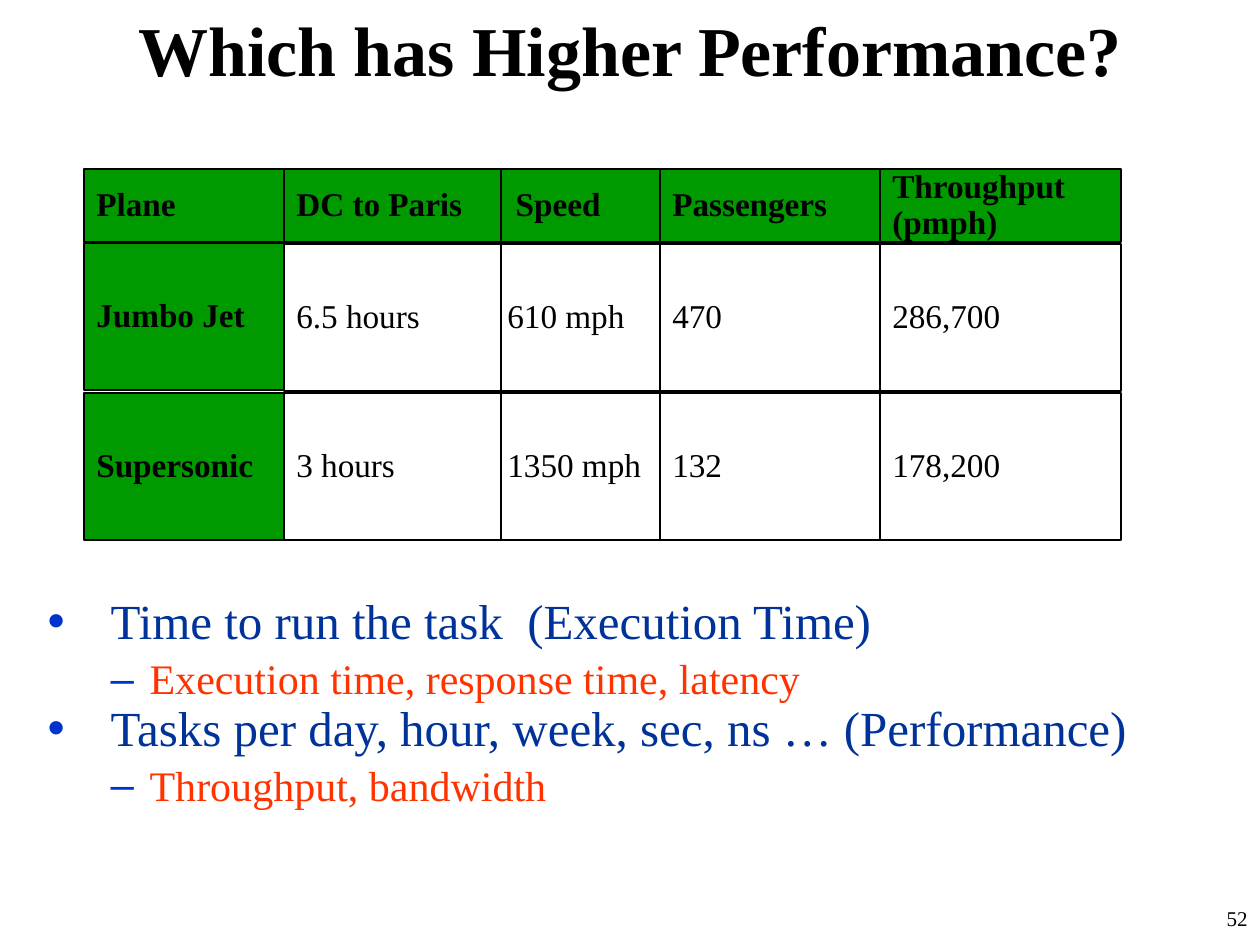
"""Build a slide that compares the performance of two planes."""
from lxml import etree
from pptx import Presentation
from pptx.dml.color import RGBColor
from pptx.enum import shapes
from pptx.enum import text as enums
from pptx.oxml import ns
from pptx.util import Emu, Pt

FONT = "Times New Roman"
BLACK, WHITE, GREEN = "000000", "FFFFFF", "009900"
BLUE, BULLET_BLUE, ORANGE = "003399", "0033CC", "FF3300"


def px(length):
    """Turn px into EMU."""
    return Emu(round(length * 914400 / 126))


def color(value):
    """Turn a hex string into a colour."""
    return RGBColor.from_string(value)


def write(paragraph, content, size=19, fill=BLACK, bold=False, align=None, spacing=None, before=0):
    """Write formatted text into a paragraph."""
    paragraph.alignment = align
    paragraph.line_spacing = spacing
    paragraph.space_before = Pt(before)
    run = paragraph.add_run()
    run.text = content
    run.font.name = FONT
    run.font.size = Pt(size)
    run.font.bold = bold
    run.font.color.rgb = color(fill)


def add_bullet(paragraph, character, margin, indent):
    """Give a paragraph a hanging bullet."""
    properties = paragraph._p.get_or_add_pPr()
    properties.set("marL", str(px(margin)))
    properties.set("indent", str(-px(indent)))
    bullet_color = etree.SubElement(properties, ns.qn("a:buClr"))
    etree.SubElement(bullet_color, ns.qn("a:srgbClr"), val=BULLET_BLUE)
    etree.SubElement(properties, ns.qn("a:buChar"), char=character)


class SlideBuilder:
    """Hold the style and the current slide."""

    def __init__(self, presentation):
        """Start a slide with a title and a body."""
        self.slide = presentation.slides.add_slide(presentation.slide_layouts[1])

    def place(self, shape, left, top, width, height):
        """Move a text shape and return its frame."""
        shape.left, shape.top, shape.width, shape.height = map(px, (left, top, width, height))
        frame = shape.text_frame
        frame.word_wrap = True
        frame.auto_size = enums.MSO_AUTO_SIZE.NONE
        return frame

    def title(self, content, *box):
        """Fill the title."""
        frame = self.place(self.slide.shapes.title, *box)
        frame.vertical_anchor = enums.MSO_ANCHOR.MIDDLE
        write(frame.paragraphs[0], content, size=40, bold=True, align=enums.PP_ALIGN.CENTER)

    def bullets(self, items, *box):
        """Fill the body with bullets on two levels."""
        frame = self.place(self.slide.placeholders[1], *box)
        for index, (level, content) in enumerate(items):
            paragraph = frame.add_paragraph() if index else frame.paragraphs[0]
            paragraph.level = level
            if level:
                write(paragraph, content, size=24, fill=ORANGE, spacing=0.9, before=4.8)
                add_bullet(paragraph, "–", 102, 39)
            else:
                write(paragraph, content, size=28, fill=BLUE, spacing=0.9)
                add_bullet(paragraph, "•", 63, 63)

    def cell(self, content, heading, *box):
        """Add one outlined box of the comparison."""
        shape = self.slide.shapes.add_shape(shapes.MSO_SHAPE.RECTANGLE, 0, 0, 0, 0)
        shape.shadow.inherit = False
        shape.fill.solid()
        shape.fill.fore_color.rgb = color(GREEN if heading else WHITE)
        shape.line.color.rgb = color(BLACK)
        shape.line.width = Pt(1)
        frame = self.place(shape, *box)
        frame.vertical_anchor = enums.MSO_ANCHOR.MIDDLE
        write(frame.paragraphs[0], content, bold=heading, align=enums.PP_ALIGN.LEFT, spacing=0.9)

    def column(self, left, width, contents, is_heading=False):
        """Stack a header box and one box for each plane."""
        rows = ((169, 73), (243 if is_heading else 244, 147), (393, 147))
        for index, (content, (top, height)) in enumerate(zip(contents, rows)):
            self.cell(content, is_heading or index == 0, left, top, width, height)

    def number(self, content, *box):
        """Add the slide number."""
        shape = self.slide.shapes.add_textbox(0, 0, 0, 0)
        frame = self.place(shape, *box)
        write(frame.paragraphs[0], content, size=12, align=enums.PP_ALIGN.RIGHT, before=6)


def main():
    """Build and save the slide."""
    presentation = Presentation()
    presentation.slide_width, presentation.slide_height = px(1260), px(945)
    builder = SlideBuilder(presentation)
    builder.title("Which has Higher Performance?", 0, 0, 1260, 97)
    builder.bullets(
        [
            (0, "Time to run the task  (Execution Time)"),
            (1, "Execution time, response time, latency"),
            (0, "Tasks per day, hour, week, sec, ns … (Performance)"),
            (1, "Throughput, bandwidth"),
        ],
        35, 591, 1131, 221,
    )
    builder.column(84, 218, ("Plane", "Jumbo Jet", "Supersonic"), is_heading=True)
    builder.column(495, 194, (" Speed", "610 mph", "1350 mph"))
    builder.column(284, 217, ("DC to Paris", "6.5 hours", "3 hours"))
    builder.column(660, 241, ("Passengers", "470", "132"))
    builder.column(880, 241, ("Throughput (pmph)", "286,700", "178,200"))
    builder.number("52", 998, 899, 262, 46)
    presentation.save("out.pptx")


if __name__ == "__main__":
    main()
